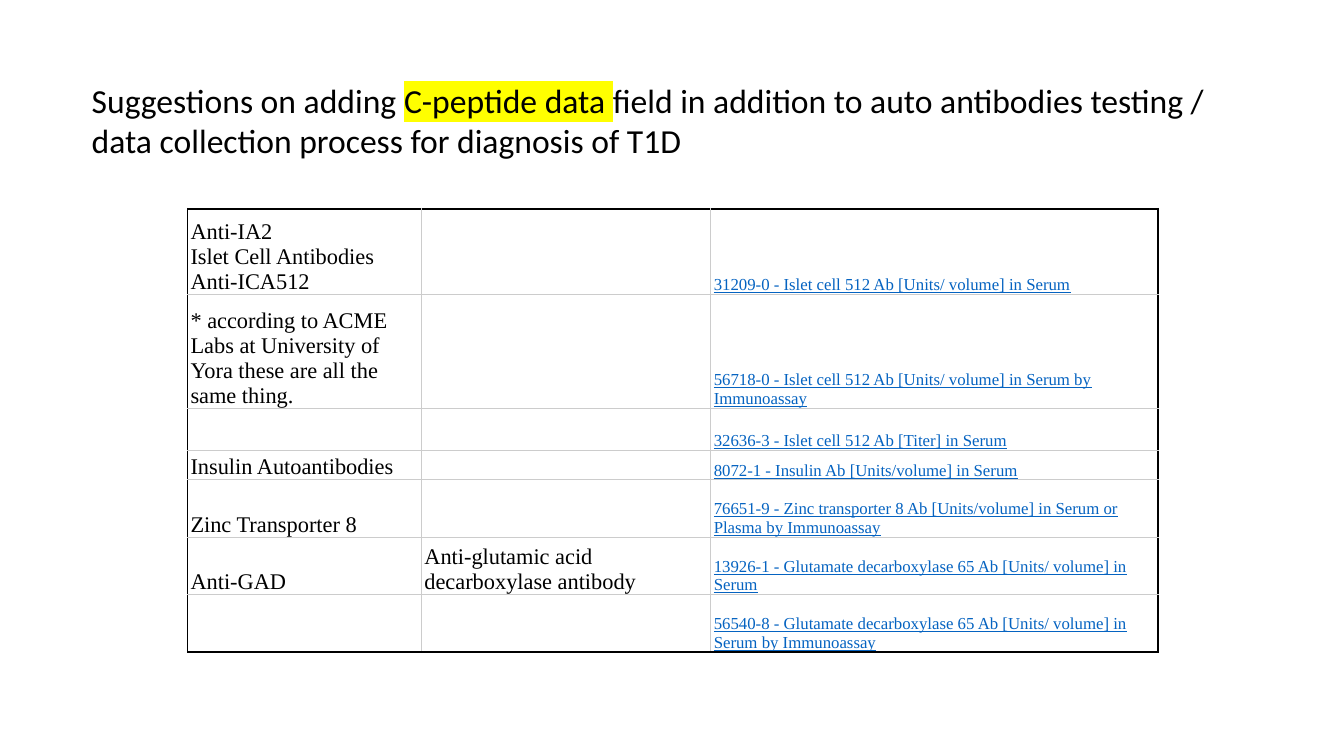
from dataclasses import dataclass

from lxml import etree
from pptx import Presentation
from pptx.dml.color import RGBColor
from pptx.enum.text import MSO_ANCHOR, MSO_AUTO_SIZE, PP_ALIGN
from pptx.oxml.ns import qn
from pptx.util import Inches, Pt

TOP, BOTTOM = MSO_ANCHOR.TOP, MSO_ANCHOR.BOTTOM
LEFT = PP_ALIGN.LEFT
NO_FIT = MSO_AUTO_SIZE.NONE
TITLE_ONLY = 5


@dataclass(frozen=True)
class Theme:
    ink: str = "000000"
    link: str = "0563C1"
    grid: str = "CCCCCC"
    mark: str = "FFFF00"
    title_font: str = "Calibri"
    table_font: str = "Times New Roman"
    title_size: int = 24
    name_size: int = 16
    code_size: int = 12
    thin: float = 0.75
    thick: float = 1.5


THEME = Theme()
TITLE = [
    [("Suggestions on adding ", False), ("C-peptide data ", True),
     ("field in addition to auto antibodies testing /", False)],
    [("data collection process for diagnosis of T1D", False)],
]
COLUMN_WIDTHS = [2.32, 2.87, 4.44]
ANTIBODIES = [
    (0.85, "Anti-IA2\nIslet Cell Antibodies\nAnti-ICA512", "",
     "31209-0 - Islet cell 512 Ab [Units/ volume] in Serum"),
    (1.13, "* according to ACME Labs at University of Yora these are all the same thing.", "",
     "56718-0 - Islet cell 512 Ab [Units/ volume] in Serum by Immunoassay"),
    (0.42, "", "", "32636-3 - Islet cell 512 Ab [Titer] in Serum"),
    (0.29, "Insulin Autoantibodies", "", "8072-1 - Insulin Ab [Units/volume] in Serum"),
    (0.57, "Zinc Transporter 8", "",
     "76651-9 - Zinc transporter 8 Ab [Units/volume] in Serum or Plasma by Immunoassay"),
    (0.57, "Anti-GAD", "Anti-glutamic acid decarboxylase antibody",
     "13926-1 - Glutamate decarboxylase 65 Ab [Units/ volume] in Serum"),
    (0.57, "", "", "56540-8 - Glutamate decarboxylase 65 Ab [Units/ volume] in Serum by Immunoassay"),
]


def apply(obj, formats):
    for name, value in formats.items():
        setattr(obj, name, value)


def format_run(r, color, **formats):
    r.font.color.rgb = RGBColor.from_string(color)
    apply(r.font, formats)


def add_color(parent, tag, color):
    holder = etree.SubElement(parent, qn(tag))
    etree.SubElement(holder, qn("a:srgbClr"), val=color)
    return holder


def highlight(r, color):
    rPr = r._r.get_or_add_rPr()
    rPr.find(qn("a:solidFill")).addnext(add_color(rPr, "a:highlight", color))


def add_title(slide):
    sp = slide.shapes.title
    apply(sp, {"left": Inches(0.81), "top": Inches(0.74),
               "width": Inches(12.53), "height": Inches(0.91)})
    tf = sp.text_frame
    apply(tf, {"word_wrap": True, "auto_size": NO_FIT, "vertical_anchor": TOP})
    for i, line in enumerate(TITLE):
        p = tf.add_paragraph() if i else tf.paragraphs[0]
        p.alignment = LEFT
        for text, marked in line:
            r = p.add_run()
            r.text = text
            format_run(r, THEME.ink, name=THEME.title_font, size=Pt(THEME.title_size))
            if marked:
                highlight(r, THEME.mark)


def set_borders(cell, borders):
    tcPr = cell._tc.get_or_add_tcPr()
    for side, (color, width) in borders.items():
        ln = etree.SubElement(tcPr, qn(f"a:ln{side}"), w=str(Pt(width)))
        add_color(ln, "a:solidFill", color)


def fill_cell(cell, text, is_code):
    apply(cell, {"margin_left": Inches(0.03), "margin_right": Inches(0.03),
                 "margin_top": 0, "margin_bottom": 0, "vertical_anchor": BOTTOM})
    p = cell.text_frame.paragraphs[0]
    p.text = text
    size = Pt(THEME.code_size if is_code or not text else THEME.name_size)
    for r in p.runs:
        format_run(r, THEME.link if is_code else THEME.ink,
                   name=THEME.table_font, size=size, underline=is_code)
    if not text:
        p._p.get_or_add_endParaRPr().set("sz", str(int(size.pt * 100)))


def add_antibody_table(slide):
    rows, cols = len(ANTIBODIES), len(COLUMN_WIDTHS)
    heights = [row[0] for row in ANTIBODIES]
    table = slide.shapes.add_table(
        rows, cols, Inches(1.86), Inches(2.07),
        Inches(sum(COLUMN_WIDTHS)), Inches(sum(heights))).table
    apply(table, {"first_row": False, "horz_banding": False})
    for column, width in zip(table.columns, COLUMN_WIDTHS):
        column.width = Inches(width)
    grid = (THEME.grid, THEME.thin)
    edge = (THEME.ink, THEME.thick)
    for i, (height, *texts) in enumerate(ANTIBODIES):
        table.rows[i].height = Inches(height)
        for j, text in enumerate(texts):
            cell = table.cell(i, j)
            fill_cell(cell, text, j == cols - 1)
            set_borders(cell, {
                "L": grid if j else (THEME.ink, THEME.thin),
                "R": edge if j == cols - 1 else grid,
                "T": grid if i else edge,
                "B": edge if i == rows - 1 else grid,
            })
            cell.fill.background()


def main():
    prs = Presentation()
    apply(prs, {"slide_width": Inches(13.33), "slide_height": Inches(7.5)})
    slide = prs.slides.add_slide(prs.slide_layouts[TITLE_ONLY])
    add_antibody_table(slide)
    add_title(slide)
    prs.save("out.pptx")


if __name__ == "__main__":
    main()
